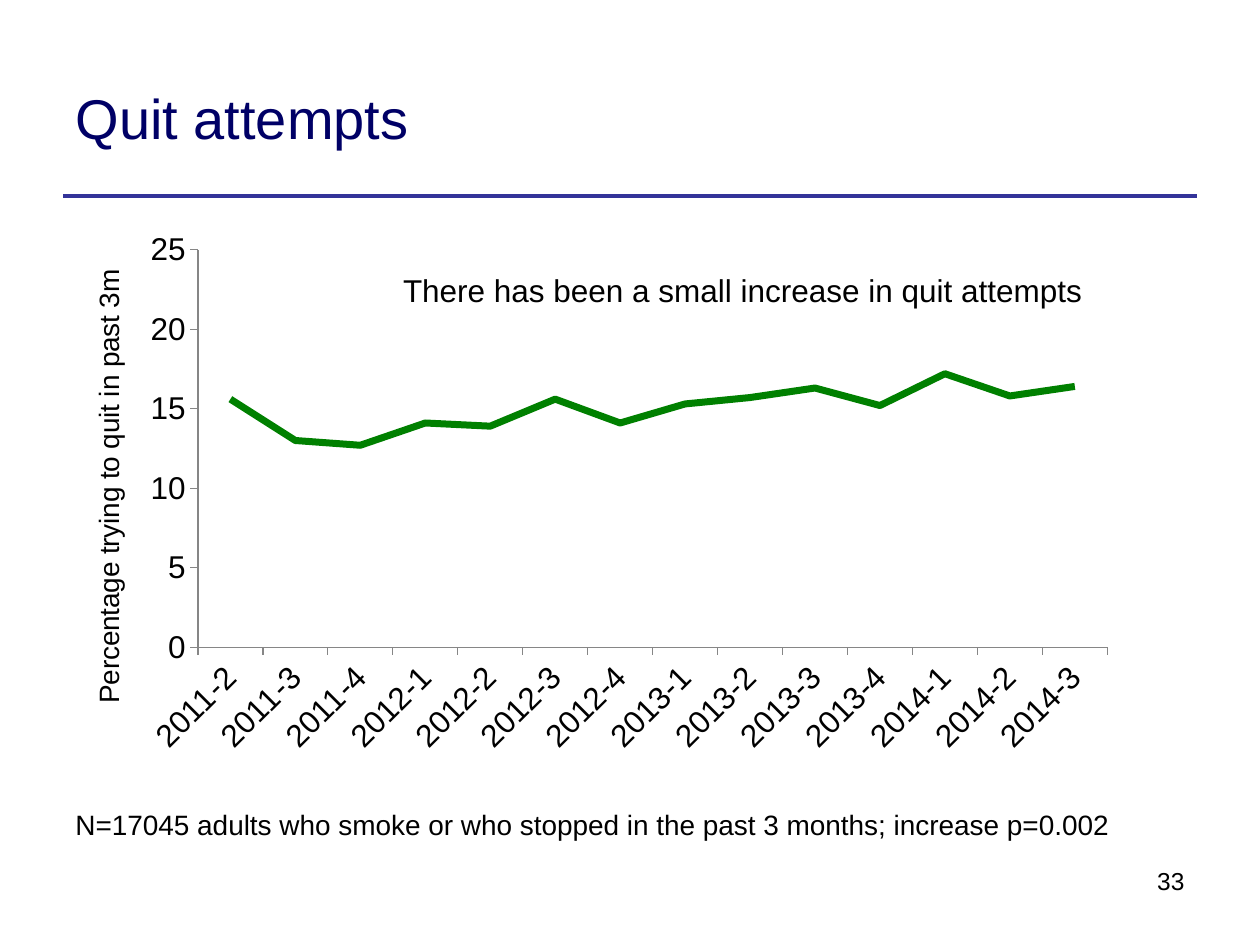
from dataclasses import dataclass

from lxml import etree
from pptx import Presentation
from pptx.chart.data import CategoryChartData
from pptx.dml.color import RGBColor
from pptx.enum.chart import XL_CHART_TYPE, XL_TICK_MARK
from pptx.enum.shapes import MSO_CONNECTOR
from pptx.enum.text import MSO_ANCHOR, MSO_AUTO_SIZE, PP_ALIGN
from pptx.oxml.ns import qn
from pptx.util import Inches, Pt

LINE_CHART = XL_CHART_TYPE.LINE
TICK_OUTSIDE = XL_TICK_MARK.OUTSIDE
STRAIGHT = MSO_CONNECTOR.STRAIGHT
MIDDLE, TOP = MSO_ANCHOR.MIDDLE, MSO_ANCHOR.TOP
LEFT, RIGHT = PP_ALIGN.LEFT, PP_ALIGN.RIGHT
FIT_SHAPE, FIT_NONE = MSO_AUTO_SIZE.SHAPE_TO_FIT_TEXT, MSO_AUTO_SIZE.NONE

TITLE_ONLY = 5
WIDTH, HEIGHT = Inches(10), Inches(7.5)
MARGIN = 0.05


@dataclass(frozen=True)
class Theme:
    """Colours, font and type sizes of the slide."""

    font: str = "Arial"
    text: str = "000000"
    title: str = "000066"
    rule: str = "333399"
    series: str = "008000"
    axis: str = "868686"
    title_size: int = 32
    body_size: int = 18
    note_size: int = 16
    number_size: int = 14


THEME = Theme()

QUIT_ATTEMPTS = {
    "2011-2": 15.6, "2011-3": 13, "2011-4": 12.7,
    "2012-1": 14.1, "2012-2": 13.9, "2012-3": 15.6, "2012-4": 14.1,
    "2013-1": 15.3, "2013-2": 15.7, "2013-3": 16.3, "2013-4": 15.2,
    "2014-1": 17.2, "2014-2": 15.8, "2014-3": 16.4,
}


def share_box(left, top, width, height):
    """Turn shares of the slide into a box of lengths."""
    return (int(left * WIDTH), int(top * HEIGHT),
            int(width * WIDTH), int(height * HEIGHT))


def format_font(font, size, color=THEME.text):
    """Apply the theme font with a size and a colour."""
    font.name = THEME.font
    font.size = Pt(size)
    font.bold = False
    font.color.rgb = RGBColor.from_string(color)


def write_text(text_frame, text, size=THEME.body_size, color=THEME.text,
               align=LEFT, anchor=TOP, wrap=True, fit=FIT_NONE):
    """Fill a text frame with one formatted paragraph."""
    text_frame.word_wrap = wrap
    text_frame.auto_size = fit
    text_frame.vertical_anchor = anchor
    paragraph = text_frame.paragraphs[0]
    paragraph.alignment = align
    run = paragraph.add_run()
    run.text = text
    format_font(run.font, size, color)


def add_label(slide, box, text, **text_format):
    """Add a text box with one formatted paragraph."""
    shape = slide.shapes.add_textbox(*box)
    write_text(shape.text_frame, text, **text_format)


def add_heading(slide, box, text):
    """Place the title and the rule along its lower edge."""
    left, top, width, height = box
    title = slide.shapes.title
    title.left, title.top, title.width, title.height = box
    write_text(title.text_frame, text, size=THEME.title_size,
               color=THEME.title, anchor=MIDDLE)
    rule_y = top + height
    rule = slide.shapes.add_connector(
        STRAIGHT, left, rule_y, WIDTH - left, rule_y)
    rule.line.color.rgb = RGBColor.from_string(THEME.rule)
    rule.line.width = Pt(2.25)
    etree.SubElement(rule._element.spPr, qn("a:effectLst"))


def set_layout(element, index, inner=False, **shares):
    """Give a chart part a manual layout in shares of the chart."""
    for old_layout in element.findall(qn("c:layout")):
        element.remove(old_layout)
    layout = etree.Element(qn("c:layout"))
    manual = etree.SubElement(layout, qn("c:manualLayout"))
    settings = {"layoutTarget": "inner"} if inner else {}
    settings.update(xMode="edge", yMode="edge", **shares)
    for name, value in settings.items():
        etree.SubElement(manual, qn(f"c:{name}")).set("val", str(value))
    element.insert(index, layout)


def rotate_text(element, degrees):
    """Turn the text held in a chart element."""
    for body in element.xpath(".//a:bodyPr"):
        body.set("rot", str(degrees * 60000))
        body.set("vert", "horz")


def format_axis(axis):
    """Set ticks, line and labels of an axis."""
    axis.has_major_gridlines = False
    axis.major_tick_mark = TICK_OUTSIDE
    axis.format.line.color.rgb = RGBColor.from_string(THEME.axis)
    axis.format.line.width = Pt(0.75)
    axis.tick_labels.number_format = "General"
    axis.tick_labels.number_format_is_linked = False
    format_font(axis.tick_labels.font, THEME.body_size)


def add_trend_chart(slide, box, values, axis_text):
    """Add the line chart of quit attempts by quarter."""
    data = CategoryChartData()
    data.categories = list(values)
    data.add_series("Series 1", list(values.values()))
    chart = slide.shapes.add_chart(LINE_CHART, *box, data).chart
    chart.has_legend = False
    chart.has_title = False
    format_font(chart.font, THEME.body_size)

    plot = chart.plots[0]
    plot.vary_by_categories = False
    series = plot.series[0]
    series.smooth = False
    series.format.line.color.rgb = RGBColor.from_string(THEME.series)
    series.format.line.width = Pt(4)

    category_axis, value_axis = chart.category_axis, chart.value_axis
    format_axis(category_axis)
    rotate_text(category_axis._element, -45)
    format_axis(value_axis)
    value_axis.minimum_scale = 0
    value_axis.maximum_scale = 25
    value_axis.major_unit = 5
    axis_title = value_axis.axis_title
    run = axis_title.text_frame.paragraphs[0].add_run()
    run.text = axis_text
    format_font(run.font, THEME.note_size)
    rotate_text(axis_title._element, -90)
    set_layout(axis_title._element, 1, x=0.02, y=0.08)
    plot_area = chart._chartSpace.find(f".//{qn('c:plotArea')}")
    set_layout(plot_area, 0, inner=True, x=0.119, y=0.053, w=0.802, h=0.713)


def build_slide(presentation):
    """Build the quit attempts slide."""
    slide = presentation.slides.add_slide(
        presentation.slide_layouts[TITLE_ONLY])
    add_heading(slide, share_box(MARGIN, 0.04, 0.79, 0.167), "Quit attempts")
    add_label(slide, share_box(0.673, 0.91, 0.277, 0.07), "33",
              size=THEME.number_size, align=RIGHT)
    add_trend_chart(slide, share_box(MARGIN, 0.233, 1 - 2 * MARGIN, 0.59),
                    QUIT_ATTEMPTS, "Percentage trying to quit in past 3m")
    add_label(slide, share_box(MARGIN, 0.848, 0.851, 0.05),
              "N=17045 adults who smoke or who stopped in the past 3 months; "
              "increase p=0.002",
              size=THEME.note_size, wrap=False, fit=FIT_SHAPE)
    add_label(slide, share_box(0.31, 0.28, 0.562, 0.054),
              "There has been a small increase in quit attempts",
              fit=FIT_SHAPE)


def main():
    """Create and save the presentation."""
    presentation = Presentation()
    presentation.slide_width, presentation.slide_height = WIDTH, HEIGHT
    build_slide(presentation)
    presentation.save("out.pptx")


if __name__ == "__main__":
    main()
